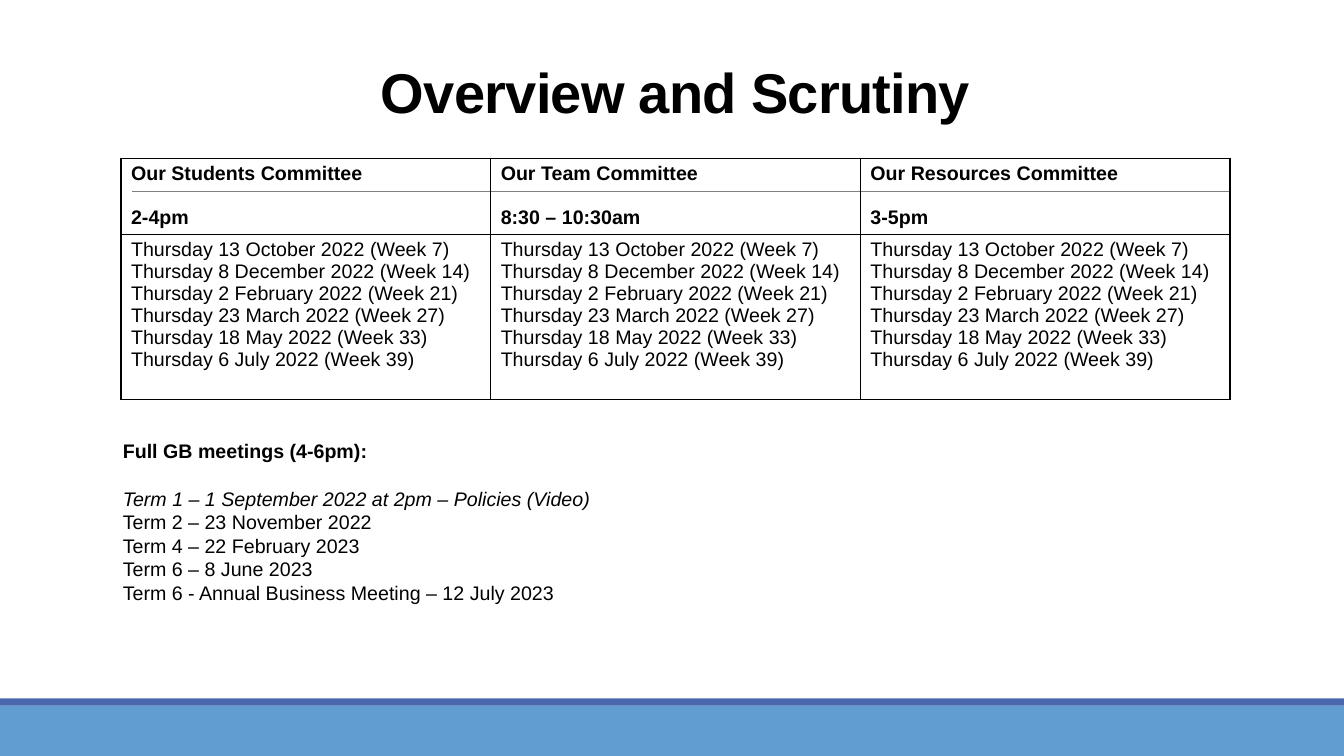
from lxml.etree import SubElement
from pptx import Presentation
from pptx.dml.color import RGBColor
from pptx.enum.shapes import MSO_CONNECTOR, MSO_SHAPE
from pptx.enum.text import MSO_ANCHOR, PP_ALIGN
from pptx.oxml.ns import qn
from pptx.util import Inches, Pt

# Content
TITLE = "Overview and Scrutiny"
COMMITTEES = [
    ("Our Students Committee", "2-4pm"),
    ("Our Team Committee", "8:30 – 10:30am"),
    ("Our Resources Committee", "3-5pm"),
]
DATES = [
    "Thursday 13 October 2022 (Week 7)",
    "Thursday 8 December 2022 (Week 14)",
    "Thursday 2 February 2022 (Week 21)",
    "Thursday 23 March 2022 (Week 27)",
    "Thursday 18 May 2022 (Week 33)",
    "Thursday 6 July 2022 (Week 39)",
]
MEETINGS_HEADING = "Full GB meetings (4-6pm):"
POLICIES_MEETING = "Term 1 – 1 September 2022 at 2pm – Policies (Video)"
MEETINGS = [
    "Term 2 – 23 November 2022",
    "Term 4 – 22 February 2023",
    "Term 6 – 8 June 2023",
    "Term 6 - Annual Business Meeting – 12 July 2023",
]

BLACK = RGBColor(0x00, 0x00, 0x00)
GREY = RGBColor(0x80, 0x80, 0x80)
LIGHT_BLUE = RGBColor(0x62, 0x9D, 0xD1)
DARK_BLUE = RGBColor(0x4A, 0x66, 0xAC)

# Layout, in inches
SLIDE_W, SLIDE_H = 13.33, 7.5
LEFT, CONTENT_W = 1.2, 11
TABLE_TOP, ROW_HEIGHTS = 1.57, (0.76, 1.63)
BAND_H, STRIPE_H = 0.5, 0.07

# Text, in points
BODY_SIZE, BLANK_LINE = 14, 16


def add_run(p, text, size=BODY_SIZE, bold=False, italic=False):
    r = p.add_run()
    r.text = text
    r.font.name, r.font.size = "Arial", Pt(size)
    r.font.bold, r.font.italic = bold, italic
    r.font.color.rgb = BLACK
    return r


def write_lines(tf, lines):
    """Each line is (text, bold, italic, points before)."""
    for i, (text, bold, italic, before) in enumerate(lines):
        p = tf.paragraphs[0] if i == 0 else tf.add_paragraph()
        p.space_before = Pt(before)
        add_run(p, text, bold=bold, italic=italic)


def add_text_box(s, left, top, width, height):
    tf = s.shapes.add_textbox(*map(Inches, (left, top, width, height))).text_frame
    tf.word_wrap = True
    return tf


def style_cell(cell):
    cell.margin_top, cell.margin_bottom = Inches(0.04), Inches(0.03)
    tc_pr = cell._tc.get_or_add_tcPr()
    for side in ("a:lnL", "a:lnR", "a:lnT", "a:lnB"):
        ln = SubElement(tc_pr, qn(side), w=str(Pt(1)))
        fill = SubElement(ln, qn("a:solidFill"))
        SubElement(fill, qn("a:srgbClr"), val=str(BLACK))
    cell.fill.background()


def main():
    prs = Presentation()
    prs.slide_width, prs.slide_height = Inches(SLIDE_W), Inches(SLIDE_H)
    s = prs.slides.add_slide(prs.slide_layouts[6])

    # Footer bands
    band_top = SLIDE_H - BAND_H
    for top, height, color in [(band_top, BAND_H, LIGHT_BLUE),
                               (band_top - STRIPE_H, STRIPE_H, DARK_BLUE)]:
        sp = s.shapes.add_shape(MSO_SHAPE.RECTANGLE, 0, Inches(top),
                                prs.slide_width, Inches(height))
        sp.shadow.inherit = False
        sp.fill.solid()
        sp.fill.fore_color.rgb = color
        sp.line.fill.background()

    # Rule behind the table
    rule = s.shapes.add_connector(MSO_CONNECTOR.STRAIGHT, Inches(1.31), Inches(1.9),
                                  Inches(12.21), Inches(1.9))
    rule.line.color.rgb = GREY
    rule.line.width = Pt(0.5)
    SubElement(rule._element.spPr, qn("a:effectLst"))

    # Title
    tf = add_text_box(s, LEFT, 0.31, CONTENT_W, 0.98)
    tf.vertical_anchor = MSO_ANCHOR.BOTTOM
    p = tf.paragraphs[0]
    p.alignment, p.line_spacing = PP_ALIGN.CENTER, 0.85
    r = add_run(p, TITLE, size=40, bold=True)
    r._r.get_or_add_rPr().set("spc", "-50")

    # Committee table
    table = s.shapes.add_table(len(ROW_HEIGHTS), len(COMMITTEES), Inches(LEFT),
                               Inches(TABLE_TOP), Inches(CONTENT_W),
                               Inches(sum(ROW_HEIGHTS))).table
    table.first_row = table.horz_banding = False
    for row, height in zip(table.rows, ROW_HEIGHTS):
        row.height = Inches(height)
    for col, (name, time) in enumerate(COMMITTEES):
        heading = [(name, True, False, 0), (time, True, False, BLANK_LINE)]
        dates = [(date, False, False, 0) for date in DATES]
        for row, lines in enumerate((heading, dates)):
            cell = table.cell(row, col)
            style_cell(cell)
            write_lines(cell.text_frame, lines)

    # Full meetings
    lines = [(MEETINGS_HEADING, True, False, 0),
             (POLICIES_MEETING, False, True, BLANK_LINE + 1)]
    lines += [(meeting, False, False, 0) for meeting in MEETINGS]
    write_lines(add_text_box(s, 1.12, 4.31, CONTENT_W, 1.75), lines)

    prs.save("out.pptx")


if __name__ == "__main__":
    main()
